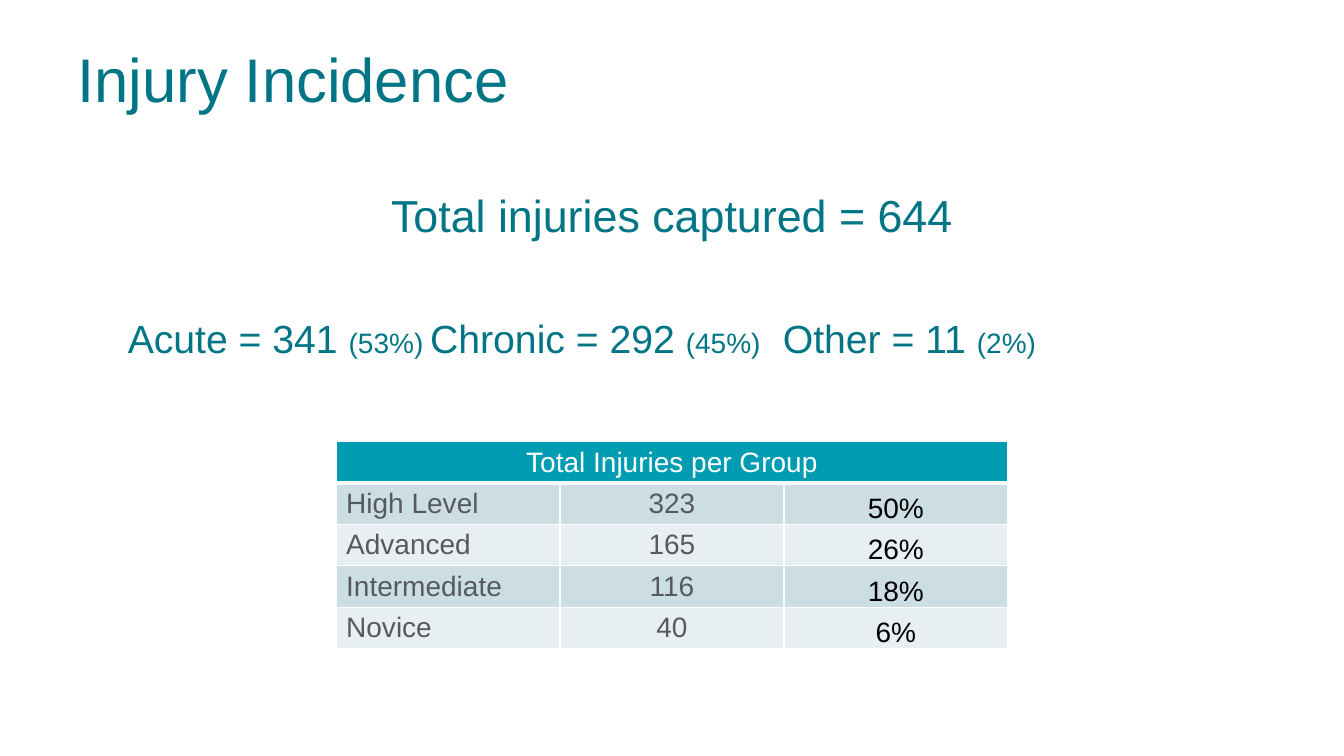
from pptx import Presentation
from pptx.dml.color import RGBColor as Rgb
from pptx.enum.text import MSO_ANCHOR as Anchor, MSO_AUTO_SIZE as AutoSize, PP_ALIGN as Align
from pptx.oxml.ns import qn
from pptx.util import Cm, Pt
from lxml.etree import SubElement

COLOURS = {
    "teal": "007585", "header": "009CB1", "dark band": "CCDEE4",
    "light band": "E7EFF2", "grey": "565A5C", "black": "000000", "white": "FFFFFF",
}
FRAME = {
    "word_wrap": True, "auto_size": AutoSize.NONE, "vertical_anchor": Anchor.TOP,
    "margin_left": Cm(0.25), "margin_right": Cm(0.25),
    "margin_top": Cm(0.28), "margin_bottom": Cm(0.13),
}
PERCENT_CELL = {
    "vertical_anchor": Anchor.BOTTOM, "margin_left": Cm(0.03),
    "margin_right": Cm(0.03), "margin_top": Cm(0.03), "margin_bottom": 0,
}
INJURY_TYPES = [("Acute = 341 ", "(53%)"), ("Chronic = 292 ", "(45%)"), ("Other = 11 ", "(2%)")]
TYPE_STOPS = [1.78, 11.78, 23.06]
GROUPS = [
    ("High Level", "323", "50%"), ("Advanced", "165", "26%"),
    ("Intermediate", "116", "18%"), ("Novice", "40", "6%"),
]


def apply(target, values):
    for name, value in values.items():
        setattr(target, name, value)


def place(shape, box):
    apply(shape, dict(zip(("left", "top", "width", "height"), map(Cm, box))))
    apply(shape.text_frame, FRAME)


def add_span(para, text, size, colour):
    span = para.add_run()
    span.text = text
    apply(span.font, {"name": "Arial", "size": Pt(size), "bold": False})
    span.font.color.rgb = Rgb.from_string(COLOURS[colour])


def plain_para(para, align, before=0, stops=()):
    """Remove the bullet and indent, and set any tab stops."""
    props = para._p.get_or_add_pPr()
    props.set("marL", "0")
    props.set("indent", "0")
    SubElement(props, qn("a:buNone"))
    if stops:
        tabs = SubElement(props, qn("a:tabLst"))
        for stop in stops:
            SubElement(tabs, qn("a:tab"), pos=str(Cm(stop)), algn="l")
    apply(para, {"alignment": align, "space_before": Pt(before)})


def add_title(page, box):
    title = page.shapes.title
    place(title, box)
    para = title.text_frame.paragraphs[0]
    para.alignment = Align.LEFT
    add_span(para, "Injury Incidence", 44, "teal")


def add_totals(page, box):
    body = page.placeholders[1]
    place(body, box)
    total = body.text_frame.paragraphs[0]
    plain_para(total, Align.CENTER)
    add_span(total, "Total injuries captured = 644", 32, "teal")

    # Injury types, each on its own tab stop
    types = body.text_frame.add_paragraph()
    plain_para(types, Align.LEFT, 52, TYPE_STOPS)
    for count, share in INJURY_TYPES:
        add_span(types, "\t" + count, 28, "teal")
        add_span(types, share, 20, "teal")


def style_cell(cell, fill, bottom=1):
    cell.fill.solid()
    cell.fill.fore_color.rgb = Rgb.from_string(COLOURS[fill])
    props = cell._tc.get_or_add_tcPr()
    for index, side in enumerate("LRTB"):
        width = Pt(bottom if side == "B" else 1)
        line = SubElement(props, qn(f"a:ln{side}"), w=str(width))
        paint = SubElement(line, qn("a:solidFill"))
        SubElement(paint, qn("a:srgbClr"), val=COLOURS["white"])
        props.insert(index, line)


def fill_cell(cell, text, align, colour):
    para = cell.text_frame.paragraphs[0]
    para.alignment = align
    add_span(para, text, 20, colour)


def add_group_table(page, box):
    rows, columns = len(GROUPS) + 1, len(GROUPS[0])
    table = page.shapes.add_table(rows, columns, *map(Cm, box)).table

    # Header across all columns
    header = table.cell(0, 0)
    header.merge(table.cell(0, columns - 1))
    for column in range(columns):
        style_cell(table.cell(0, column), "header", bottom=3)
    fill_cell(header, "Total Injuries per Group", Align.CENTER, "white")

    # Banded rows
    for row, values in enumerate(GROUPS, 1):
        for column, text in enumerate(values):
            cell = table.cell(row, column)
            style_cell(cell, "dark band" if row % 2 else "light band")
            is_percent = column == columns - 1
            fill_cell(cell, text, Align.CENTER if column else Align.LEFT,
                      "black" if is_percent else "grey")
            if is_percent:
                apply(cell, PERCENT_CELL)


def main():
    deck = Presentation()
    apply(deck, {"slide_width": Cm(33.87), "slide_height": Cm(19.05)})
    page = deck.slides.add_slide(deck.slide_layouts[1])
    add_title(page, (1.7, 0.76, 30.48, 3.18))
    add_totals(page, (1.7, 4.45, 30.48, 11.48))
    add_group_table(page, (8.47, 11.13, 16.93, 5.2))
    deck.save("out.pptx")


if __name__ == "__main__":
    main()
